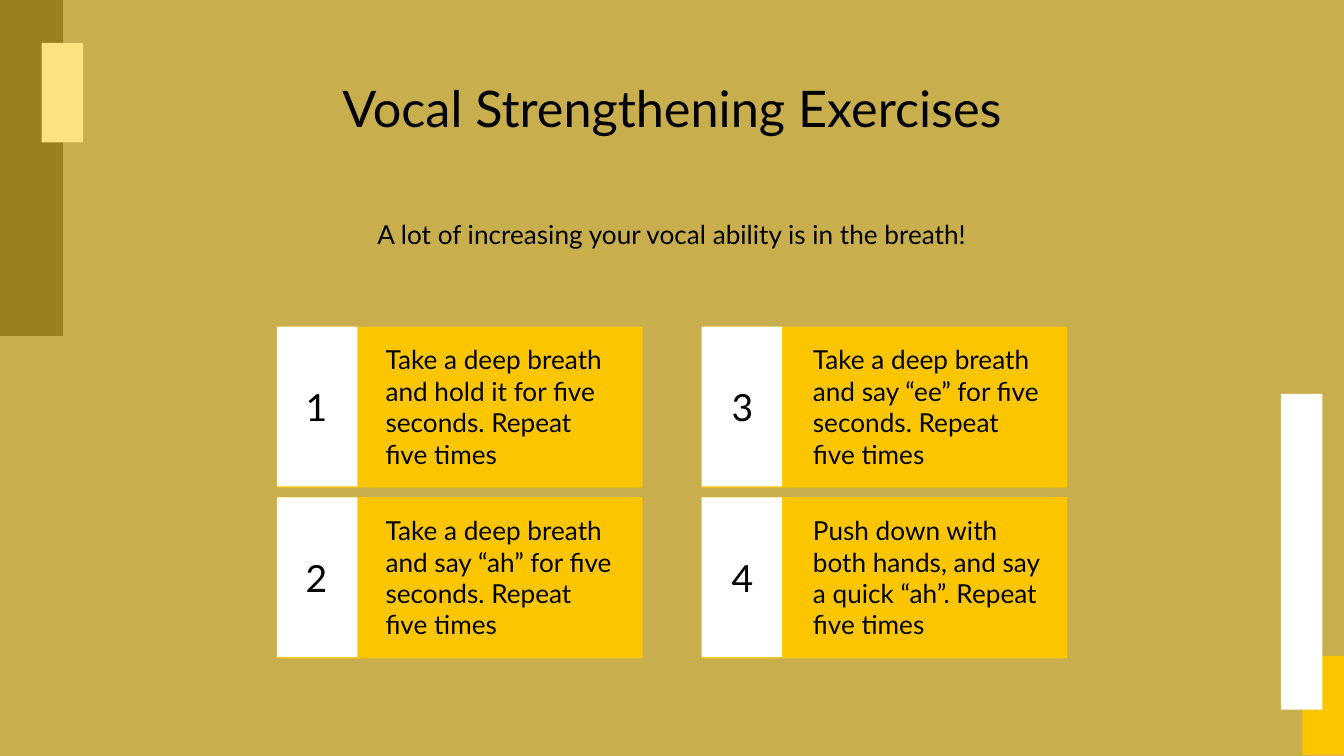
from dataclasses import dataclass

from pptx import Presentation
from pptx.dml.color import RGBColor
from pptx.enum.shapes import MSO_SHAPE
from pptx.enum.text import MSO_ANCHOR, MSO_AUTO_SIZE, PP_ALIGN
from pptx.util import Inches, Pt


@dataclass(frozen=True)
class Theme:
    back: str = "C8AE4D"
    dark: str = "9B811D"
    pale: str = "FDE380"
    gold: str = "FBC600"
    white: str = "FFFFFF"
    ink: str = "000000"
    font: str = "Lato"
    title: int = 27
    number: int = 20
    body: int = 14


theme = Theme()


def add_block(left, top, width, height, color):
    block = slide.shapes.add_shape(
        MSO_SHAPE.RECTANGLE, Inches(left), Inches(top), Inches(width), Inches(height)
    )
    block.shadow.inherit = False
    block.fill.solid()
    block.fill.fore_color.rgb = RGBColor.from_string(color)
    block.line.fill.background()


def set_text(text, *, box, size, align=PP_ALIGN.CENTER, holder=None):
    shape = holder or slide.shapes.add_textbox(0, 0, 0, 0)
    shape.left, shape.top, shape.width, shape.height = map(Inches, box)
    frame = shape.text_frame
    frame.text = text
    frame.word_wrap = True
    frame.auto_size = MSO_AUTO_SIZE.NONE
    frame.vertical_anchor = MSO_ANCHOR.MIDDLE
    frame.margin_left = frame.margin_right = Inches(0.1)
    frame.margin_top = frame.margin_bottom = Inches(0.1)
    line = frame.paragraphs[0]
    line.alignment = align
    font = line.runs[0].font
    font.name = theme.font
    font.size = Pt(size)
    font.color.rgb = RGBColor.from_string(theme.ink)


deck = Presentation()
deck.slide_width = Inches(10)
deck.slide_height = deck.slide_width * 9 // 16
slide = deck.slides.add_slide(deck.slide_layouts[5])
slide.background.fill.solid()
slide.background.fill.fore_color.rgb = RGBColor.from_string(theme.back)

for block in (
    (0, 0, 0.47, 2.5, theme.dark),
    (0.31, 0.32, 0.31, 0.74, theme.pale),
    (9.69, 4.88, 0.31, 0.74, theme.gold),
    (9.53, 2.93, 0.31, 2.35, theme.white),
):
    add_block(*block)

set_text(
    "Vocal Strengthening Exercises",
    box=(0.78, 0.59, 8.44, 0.42),
    size=theme.title,
    holder=slide.shapes.title,
)
set_text(
    "A lot of increasing your vocal ability is in the breath!",
    box=(2.59, 1.3, 4.82, 0.89),
    size=theme.body,
)

steps = (
    "Take a deep breath and hold it for five seconds. Repeat five times",
    "Take a deep breath and say “ah” for five seconds. Repeat five times",
    "Take a deep breath and say “ee” for five seconds. Repeat five times",
    "Push down with both hands, and say a quick “ah”. Repeat five times",
)
for index, step in enumerate(steps):
    column, row = divmod(index, 2)
    left = 2.06 + 3.16 * column
    top = 2.43 + 1.27 * row
    add_block(left, top, 2.72, 1.2, theme.gold)
    add_block(left, top, 0.6, 1.19, theme.white)
    set_text(
        str(index + 1),
        box=(2.17 + 3.17 * column, top + 0.35, 0.37, 0.49),
        size=theme.number,
    )
    set_text(
        step,
        box=(2.77 + 3.18 * column, top + 0.17, 1.92, 0.85),
        size=theme.body,
        align=PP_ALIGN.LEFT,
    )

deck.save("out.pptx")
